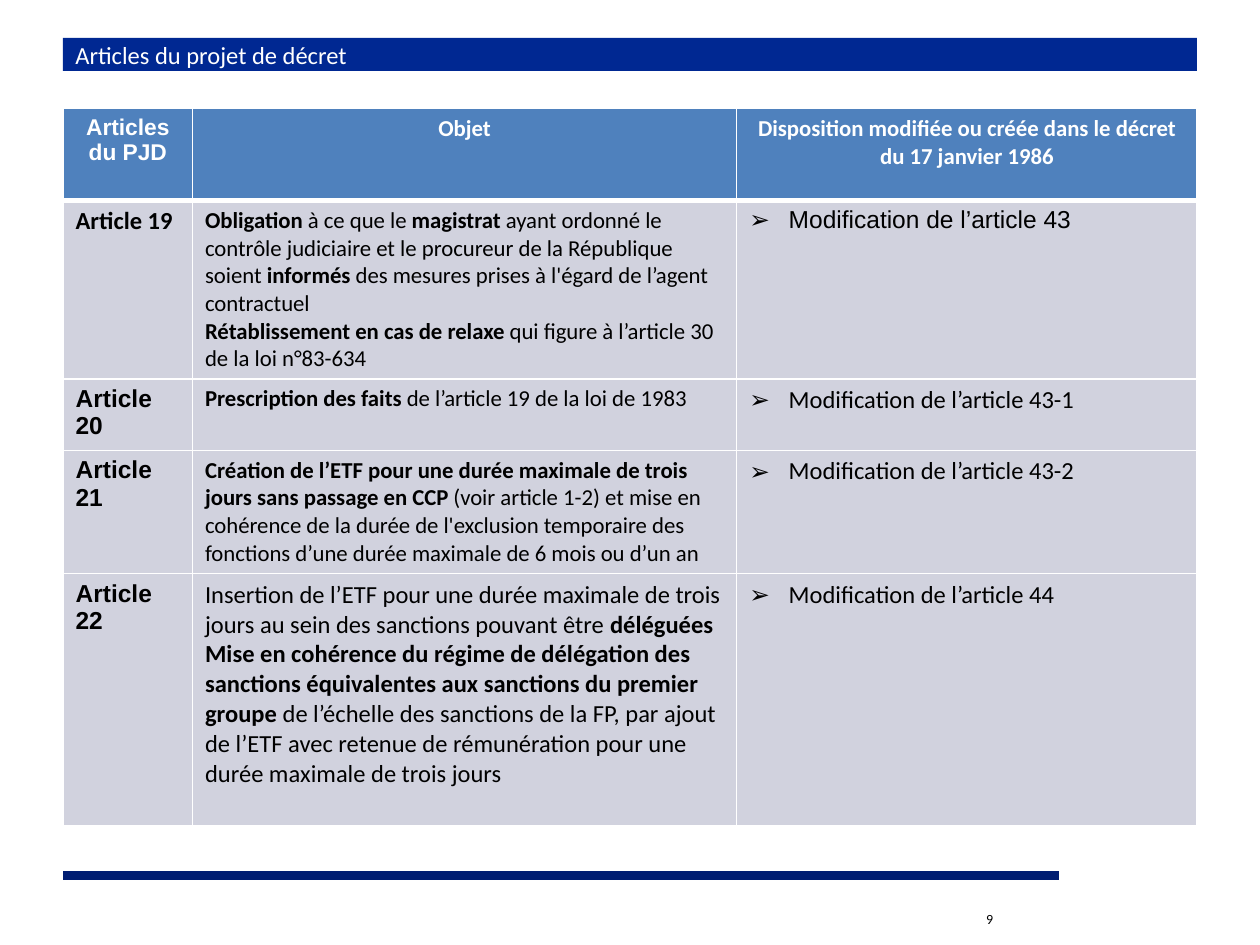
from dataclasses import dataclass

from lxml.etree import SubElement
from pptx import Presentation
from pptx.dml.color import RGBColor
from pptx.enum.shapes import MSO_CONNECTOR, MSO_SHAPE
from pptx.enum.text import MSO_ANCHOR, PP_ALIGN
from pptx.oxml.ns import qn
from pptx.util import Pt


@dataclass(frozen=True)
class Theme:
    band: str = "002892"
    rule: str = "001D72"
    head: str = "4F81BD"
    body: str = "D1D2DE"
    white: str = "FFFFFF"
    black: str = "000000"
    sans: str = "Calibri"
    alt: str = "Arial"
    big: float = 14
    mid: float = 13
    tiny: float = 8


THEME = Theme()
LEFT, WIDTH = 36, 648
COLS = (74, 311, 263)
ROWS = (52.5, 102, 38.5, 70.5, 144)

# Each header: text, font
HEADS = (
    ("Articles du PJD", THEME.alt),
    ("Objet", THEME.sans),
    ("Disposition modifiée ou créée dans le décret du 17 janvier 1986", THEME.sans),
)

# Each row: article, its font, subject paragraphs (** toggles bold),
# subject size, changed article, its font
ITEMS = (
    ("19", THEME.sans,
     ("**Obligation** à ce que le **magistrat** ayant ordonné le contrôle "
      "judiciaire et le procureur de la République soient **informés** des "
      "mesures prises à l'égard de l’agent contractuel",
      "**Rétablissement en cas de relaxe **qui figure à l’article 30 "
      "de la loi n°83-634"),
     THEME.mid, "43", THEME.alt),
    ("20", THEME.alt,
     ("**Prescription des faits **de l’article 19 de la loi de 1983",),
     THEME.mid, "43-1", THEME.sans),
    ("21", THEME.alt,
     ("**Création de l’ETF pour une durée maximale de trois jours sans "
      "passage en CCP **(voir article 1-2) et mise en cohérence de la durée "
      "de l'exclusion temporaire des fonctions d’une durée maximale de "
      "6 mois ou d’un an",),
     THEME.mid, "43-2", THEME.sans),
    ("22", THEME.alt,
     ("Insertion de l’ETF pour une durée maximale de trois jours au sein des "
      "sanctions pouvant être **déléguées**",
      "**Mise en cohérence du régime de délégation des sanctions équivalentes "
      "aux sanctions du premier groupe **de l’échelle des sanctions de la FP, "
      "par ajout de l’ETF avec retenue de rémunération pour une durée "
      "maximale de trois jours"),
     THEME.big, "44", THEME.sans),
)


def rgb(code):
    return RGBColor.from_string(code)


def style(para, size, face, color=THEME.black, bold=None):
    font = para.font
    font.size, font.name, font.bold = Pt(size), face, bold
    font.color.rgb = rgb(color)


def add_runs(para, text):
    """Add text to a paragraph, with ** switching bold on and off."""
    for num, part in enumerate(text.split("**")):
        if part:
            run = para.add_run()
            run.text = part
            run.font.bold = num % 2 == 1


def add_mark(para):
    """Give a paragraph an arrow bullet with a hanging indent."""
    props = para._p.get_or_add_pPr()
    props.set("marL", str(Pt(22.5)))
    props.set("indent", str(-Pt(22.5)))
    SubElement(props, qn("a:buFont"), typeface=THEME.alt)
    SubElement(props, qn("a:buChar"), char="➢")


def paint(cell, color, top=1, base=1):
    """Give a cell white borders and a fill."""
    props = cell._tc.get_or_add_tcPr()
    for side, width in (("L", 1), ("R", 1), ("T", top), ("B", base)):
        line = SubElement(props, qn(f"a:ln{side}"), w=str(Pt(width)))
        fill = SubElement(line, qn("a:solidFill"))
        SubElement(fill, qn("a:srgbClr"), val=THEME.white)
    cell.fill.solid()
    cell.fill.fore_color.rgb = rgb(color)


def add_title(slide, text):
    bar = slide.shapes.add_shape(
        MSO_SHAPE.RECTANGLE, Pt(LEFT), Pt(21.6), Pt(WIDTH), Pt(19))
    bar.shadow.inherit = False
    bar.fill.solid()
    bar.fill.fore_color.rgb = rgb(THEME.band)
    bar.line.fill.background()
    frame = bar.text_frame
    frame.margin_top = frame.margin_bottom = 0
    frame.vertical_anchor = MSO_ANCHOR.MIDDLE
    para = frame.paragraphs[0]
    para.text = text
    para.alignment = PP_ALIGN.LEFT
    style(para, THEME.big, THEME.sans, THEME.white)


def add_grid(slide):
    table = slide.shapes.add_table(
        len(ROWS), len(COLS), Pt(LEFT), Pt(62), Pt(WIDTH), Pt(sum(ROWS))).table
    for col, width in zip(table.columns, COLS):
        col.width = Pt(width)
    for row, height in zip(table.rows, ROWS):
        row.height = Pt(height)

    for cell, (text, face) in zip(table.rows[0].cells, HEADS):
        paint(cell, THEME.head, base=3)
        para = cell.text_frame.paragraphs[0]
        para.text = text
        para.alignment = PP_ALIGN.CENTER
        style(para, THEME.mid, face, THEME.white, True)

    for num, item in enumerate(ITEMS, 1):
        fill_row(table.rows[num].cells, item, 3 if num == 1 else 1)


def fill_row(cells, item, top):
    code, face, parts, size, target, font = item
    name, subject, change = cells
    for cell in (name, subject, change):
        paint(cell, THEME.body, top=top)

    para = name.text_frame.paragraphs[0]
    para.text = f"Article {code}"
    style(para, THEME.big, face, bold=True)

    frame = subject.text_frame
    for num, text in enumerate(parts):
        para = frame.add_paragraph() if num else frame.paragraphs[0]
        add_runs(para, text)
        style(para, size, THEME.sans)

    para = change.text_frame.paragraphs[0]
    para.text = f"Modification de l’article {target}"
    add_mark(para)
    style(para, THEME.big, font, bold=False)


def add_foot(slide, page):
    line = slide.shapes.add_connector(
        MSO_CONNECTOR.STRAIGHT, Pt(605), Pt(500.5), Pt(LEFT), Pt(500.5))
    line.line.color.rgb = rgb(THEME.rule)
    line.line.width = Pt(5)
    SubElement(line._element.spPr, qn("a:effectLst"))
    box = slide.shapes.add_textbox(Pt(556.5), Pt(517), Pt(163), Pt(22))
    box.text_frame.word_wrap = True
    para = box.text_frame.paragraphs[0]
    para.text = page
    style(para, THEME.tiny, THEME.sans)


def main():
    deck = Presentation()
    deck.slide_width, deck.slide_height = Pt(720), Pt(540)
    slide = deck.slides.add_slide(deck.slide_layouts[6])
    add_foot(slide, "9")
    add_title(slide, "Articles du projet de décret")
    add_grid(slide)
    deck.save("out.pptx")


if __name__ == "__main__":
    main()
